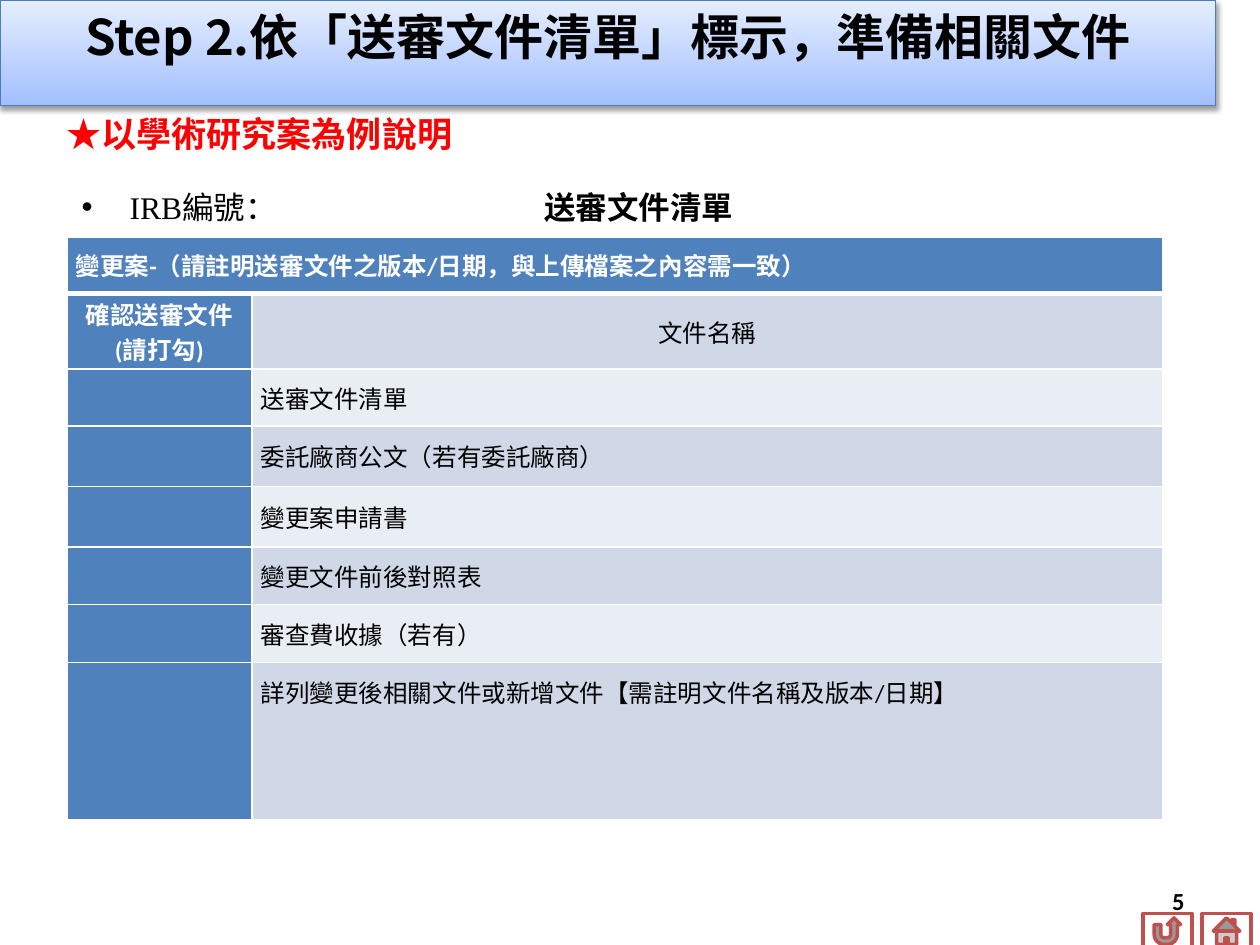
import pptx
import pptx.util
import pptx.dml.color
import pptx.enum.shapes
import pptx.enum.text
import pptx.oxml
import pptx.oxml.ns

Color = pptx.dml.color.RGBColor
Shape = pptx.enum.shapes.MSO_SHAPE
Align = pptx.enum.text.PP_ALIGN
Anchor = pptx.enum.text.MSO_ANCHOR

BLACK = Color(0x00, 0x00, 0x00)
WHITE = Color(0xFF, 0xFF, 0xFF)
RED = Color(0xFF, 0x00, 0x00)
BRICK = Color(0xC0, 0x50, 0x4D)
BLUE = Color(0x4F, 0x81, 0xBD)
BAND_LINE = Color(0x4A, 0x7E, 0xBB)
BAND_TOP = Color(0xE5, 0xEE, 0xFF)
BAND_BOTTOM = Color(0xA3, 0xBF, 0xFF)
ROW_DARK = Color(0xD0, 0xD8, 0xE8)
ROW_LIGHT = Color(0xE9, 0xED, 0xF4)

SANS = "Noto Sans CJK SC"
DOCUMENTS = ["送審文件清單", "委託廠商公文（若有委託廠商）", "變更案申請書", "變更文件前後對照表",
             "審查費收據（若有）", "詳列變更後相關文件或新增文件【需註明文件名稱及版本/日期】"]


class SlideBuilder:
    """Holds the style and current slide, on a grid of 100 columns by 75 rows."""

    def __init__(self):
        self.deck = pptx.Presentation()
        self.deck.slide_width, self.deck.slide_height = self.grid(100, 75)
        self.page = self.deck.slides.add_slide(self.deck.slide_layouts[6])

    def grid(self, *cells):
        return [pptx.util.Inches(cell / 10) for cell in cells]

    def apply(self, target, values):
        for name, value in values.items():
            setattr(target, name, value)

    def element(self, parent, tag, text="", **attributes):
        pairs = "".join(f' {key}="{value}"' for key, value in attributes.items())
        namespace = pptx.oxml.ns.nsdecls("a")
        child = pptx.oxml.parse_xml(f"<a:{tag} {namespace}{pairs}>{text}</a:{tag}>")
        parent.append(child)

    def add_span(self, para, text, size, font="Calibri", color=BLACK, bold=False):
        span = para.add_run()
        span.text = text
        self.apply(span.font, {"size": pptx.util.Pt(size), "name": font, "bold": bold})
        span.font.color.rgb = color
        self.element(span.font._element, "ea", typeface=SANS)

    def text_box(self, place, align=Align.LEFT, anchor=Anchor.TOP):
        box = self.page.shapes.add_textbox(*self.grid(*place))
        self.apply(box.text_frame, {"word_wrap": True, "vertical_anchor": anchor})
        para = box.text_frame.paragraphs[0]
        para.alignment = align
        return para

    def bullet(self, para, indent, tab):
        properties = para._p.get_or_add_pPr()
        properties.set("marL", str(indent))
        properties.set("indent", str(-indent))
        self.element(properties, "buFont", typeface="Arial")
        self.element(properties, "buChar", char="•")
        self.element(properties, "tabLst", f'<a:tab pos="{tab}" algn="l"/>')

    def band(self, place, text):
        box = self.page.shapes.add_shape(Shape.RECTANGLE, *self.grid(*place))
        box.fill.gradient()
        box.fill.gradient_angle = 270
        for stop, color in zip(box.fill.gradient_stops, (BAND_TOP, BAND_BOTTOM)):
            stop.color.rgb = color
        box.line.color.rgb = BAND_LINE
        box.line.width = pptx.util.Pt(0.75)
        shade = ('<a:outerShdw blurRad="40000" dist="20000" dir="5400000" rotWithShape="0">'
                 '<a:srgbClr val="000000"><a:alpha val="38000"/></a:srgbClr></a:outerShdw>')
        self.element(box._element.spPr, "effectLst", shade)
        self.apply(box.text_frame, {"word_wrap": True, "vertical_anchor": Anchor.TOP})
        para = box.text_frame.paragraphs[0]
        para.alignment = Align.CENTER
        self.add_span(para, text, 28, SANS, bold=True)

    def button(self, kind, place):
        shape = self.page.shapes.add_shape(kind, *self.grid(*place))
        shape.shadow.inherit = False
        shape.fill.solid()
        shape.fill.fore_color.rgb = WHITE
        shape.line.color.rgb = BRICK
        shape.line.width = pptx.util.Pt(2)

    def cell(self, cell, fill, text="", align=Align.LEFT, bottom=1, **style):
        side, none = self.grid(0.7, 0)
        self.apply(cell, {"margin_left": side, "margin_right": side, "margin_top": none,
                          "margin_bottom": none, "vertical_anchor": Anchor.MIDDLE})
        properties = cell._tc.get_or_add_tcPr()
        line = f'<a:solidFill><a:srgbClr val="{WHITE}"/></a:solidFill>'
        for edge, width in {"lnL": 1, "lnR": 1, "lnT": 1, "lnB": bottom}.items():
            self.element(properties, edge, line, w=pptx.util.Pt(width))
        cell.fill.solid()
        cell.fill.fore_color.rgb = fill
        if text:
            para = cell.text_frame.paragraphs[0]
            para.alignment = align
            self.add_span(para, text, 14, **style)

    def checklist(self, place, columns, rows):
        frame = self.page.shapes.add_table(len(rows), len(columns), *self.grid(*place))
        table = frame.table
        self.apply(table, {"first_row": False, "horz_banding": False})
        for column, width in zip(table.columns, self.grid(*columns)):
            column.width = width
        for row, height in zip(table.rows, self.grid(*rows)):
            row.height = height
        heading = {"color": WHITE, "bold": True}
        table.cell(0, 0).merge(table.cell(0, 1))
        self.cell(table.cell(0, 0), BLUE, "變更案-（請註明送審文件之版本/日期，與上傳檔案之內容需一致）",
                  bottom=3, **heading)
        self.cell(table.cell(0, 1), BLUE, bottom=3)
        self.cell(table.cell(1, 0), BLUE, "確認送審文件 (請打勾)", Align.CENTER, **heading)
        self.cell(table.cell(1, 1), ROW_DARK, "文件名稱", Align.CENTER)
        for index, name in enumerate(DOCUMENTS, start=2):
            self.cell(table.cell(index, 0), BLUE)
            self.cell(table.cell(index, 1), ROW_LIGHT if index % 2 == 0 else ROW_DARK, name)
        last = table.cell(len(rows) - 1, 1)
        self.apply(last, {"vertical_anchor": Anchor.TOP, "margin_top": self.grid(1.2)[0]})
        last.text_frame.paragraphs[0].line_spacing = pptx.util.Pt(18)


def main():
    slide = SlideBuilder()
    for kind, left in ((Shape.ACTION_BUTTON_RETURN, 90.7), (Shape.ACTION_BUTTON_HOME, 95.4)):
        slide.button(kind, (left, 72.5, 3.9, 2.8))
    slide.band((0, 0, 96.5, 8.4), "Step 2.依「送審文件清單」標示，準備相關文件")
    number = slide.text_box((71.7, 69.5, 23.3, 4), Align.RIGHT, Anchor.MIDDLE)
    slide.add_span(number, "5", 14, bold=True)
    example = slide.text_box((4.3, 8.4, 77.2, 4.4))
    slide.add_span(example, "★以學術研究案為例說明", 20, SANS, RED, True)
    listing = slide.text_box((5.5, 14.4, 89.5, 4.4))
    slide.bullet(listing, *slide.grid(3.8, 36.7))
    slide.add_span(listing, "IRB編號：\t", 18, "Times New Roman")
    slide.add_span(listing, "送審文件清單", 18, "Times New Roman", bold=True)
    slide.checklist((5.3, 18.8, 87, 46.4), (14.7, 72.3),
                    (4.5, 6, 4.5, 4.8, 4.8, 4.6, 4.6, 12.5))
    slide.deck.save("out.pptx")


if __name__ == "__main__":
    main()
